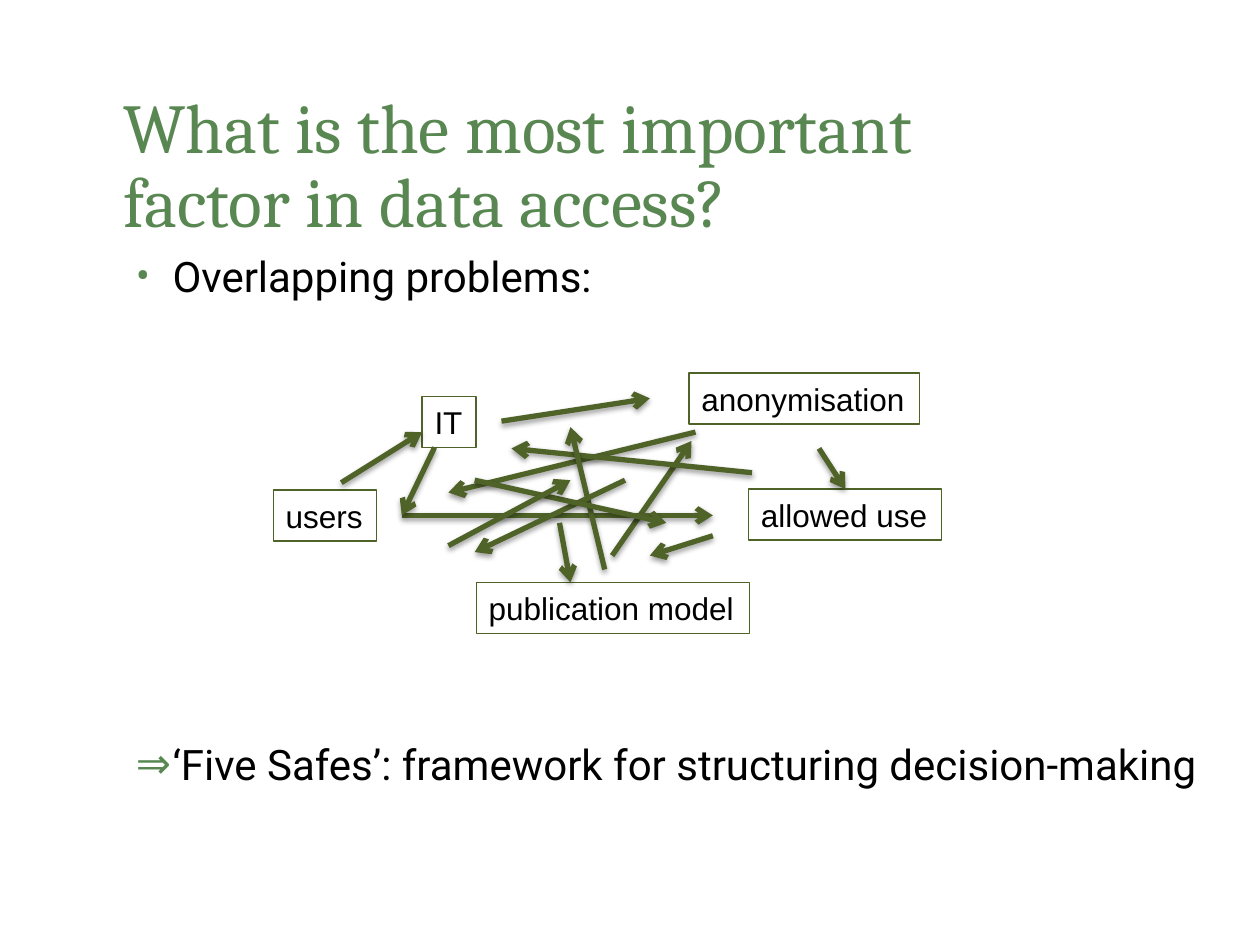
from lxml import etree
from pptx import Presentation
from pptx.dml.color import RGBColor
from pptx.enum.shapes import MSO_CONNECTOR, MSO_SHAPE
from pptx.enum.text import MSO_ANCHOR, PP_ALIGN
from pptx.oxml.ns import qn
from pptx.util import Cm, Pt

STRAIGHT = MSO_CONNECTOR.STRAIGHT
RECTANGLE = MSO_SHAPE.RECTANGLE
MIDDLE = MSO_ANCHOR.MIDDLE
LEFT = PP_ALIGN.LEFT

SAGE = RGBColor(0x59, 0x87, 0x52)
OLIVE = RGBColor(0x4F, 0x62, 0x28)
BLACK = RGBColor(0, 0, 0)

BULLET_INDENT = Cm(0.74)
FACTOR_HEIGHT = 1.03

FACTORS = [
    ("IT", 3.0, 0.48, 1.09),
    ("allowed use", 9.58, 2.34, 3.89),
    ("users", 0, 2.36, 2.08),
    ("anonymisation", 8.38, 0, 4.65),
    ("publication model", 4.09, 4.22, 5.51),
]

INFLUENCES = [
    ((4.6, 0.97), (7.59, 0.51)),
    ((8.51, 1.19), (3.53, 2.41)),
    ((6.83, 3.68), (8.43, 1.37)),
    ((8.86, 3.28), (7.59, 3.68)),
    ((2.59, 2.87), (8.86, 2.87)),
    ((1.37, 2.21), (3.0, 1.19)),
    ((9.65, 2.01), (4.8, 1.52)),
    ((3.25, 1.5), (2.59, 2.87)),
    ((11.0, 1.52), (11.53, 2.34)),
    ((6.68, 3.96), (5.99, 1.09)),
    ((7.09, 2.16), (4.06, 3.61)),
    ((4.06, 2.16), (7.92, 3.02)),
    ((3.53, 3.48), (5.99, 2.16)),
    ((5.77, 3.02), (5.99, 4.22)),
]


def write(paragraph, text, *, font, size, color=BLACK, bullet=None,
          line_spacing=None, space_before=None):
    paragraph.alignment = LEFT
    paragraph.line_spacing = line_spacing
    paragraph.space_before = space_before
    if bullet:
        properties = paragraph._p.get_or_add_pPr()
        properties.set("marL", str(BULLET_INDENT))
        properties.set("indent", str(-BULLET_INDENT))
        bullet_color = etree.SubElement(properties, qn("a:buClr"))
        etree.SubElement(bullet_color, qn("a:srgbClr"), val=str(SAGE))
        etree.SubElement(properties, qn("a:buFont"), typeface=font)
        etree.SubElement(properties, qn("a:buChar"), char=bullet)
    run = paragraph.add_run()
    run.text = text
    run.font.name = font
    run.font.size = Pt(size)
    run.font.color.rgb = color


def add_title(slide, left, top, width, height):
    frame = slide.shapes.add_textbox(left, top, width, height).text_frame
    frame.word_wrap = True
    frame.margin_left = frame.margin_right = 0
    frame.margin_top = frame.margin_bottom = 0
    write(frame.paragraphs[0], "What is the most important factor in data access?",
          font="Cambria", size=40, color=SAGE, line_spacing=Pt(42))


def add_points(slide, left, top, width, height):
    frame = slide.shapes.add_textbox(left, top, width, height).text_frame
    frame.word_wrap = True
    write(frame.paragraphs[0], "Overlapping problems:",
          font="Roboto", size=24, bullet="•")
    write(frame.add_paragraph(),
          "‘Five Safes’: framework for structuring decision-making",
          font="Roboto", size=24, bullet="⇒", space_before=Pt(250))


def add_factor(slide, name, left, top, width, height):
    factor = slide.shapes.add_shape(RECTANGLE, left, top, width, height)
    factor.shadow.inherit = False
    factor.fill.background()
    factor.line.color.rgb = OLIVE
    factor.line.width = Pt(0.75)
    frame = factor.text_frame
    frame.word_wrap = False
    frame.vertical_anchor = MIDDLE
    write(frame.paragraphs[0], name, font="Arial", size=18)


def add_influence(slide, start_x, start_y, end_x, end_y):
    influence = slide.shapes.add_connector(STRAIGHT, start_x, start_y, end_x, end_y)
    influence.line.color.rgb = OLIVE
    influence.line.width = Pt(3)
    etree.SubElement(influence.line._get_or_add_ln(), qn("a:tailEnd"), type="arrow")
    effects = etree.SubElement(influence._element.spPr, qn("a:effectLst"))
    shadow = etree.SubElement(effects, qn("a:outerShdw"), blurRad="40000",
                              dist="20000", dir="5400000", rotWithShape="0")
    shade = etree.SubElement(shadow, qn("a:srgbClr"), val=str(BLACK))
    etree.SubElement(shade, qn("a:alpha"), val="38000")


def add_factor_web(slide, left, top):
    for name, x, y, width in FACTORS:
        add_factor(slide, name, left + Cm(x), top + Cm(y), Cm(width), Cm(FACTOR_HEIGHT))
    for (start_x, start_y), (end_x, end_y) in INFLUENCES:
        add_influence(slide, left + Cm(start_x), top + Cm(start_y),
                      left + Cm(end_x), top + Cm(end_y))


def main():
    deck = Presentation()
    deck.slide_width, deck.slide_height = Cm(25.4), Cm(19.05)
    slide = deck.slides.add_slide(deck.slide_layouts[6])
    add_title(slide, Cm(2.49), Cm(1.9), Cm(18.11), Cm(1.8))
    add_points(slide, Cm(2.49), Cm(4.93), Cm(22), Cm(12.8))
    add_factor_web(slide, Cm(5.51), Cm(7.52))
    deck.save("out.pptx")


if __name__ == "__main__":
    main()
